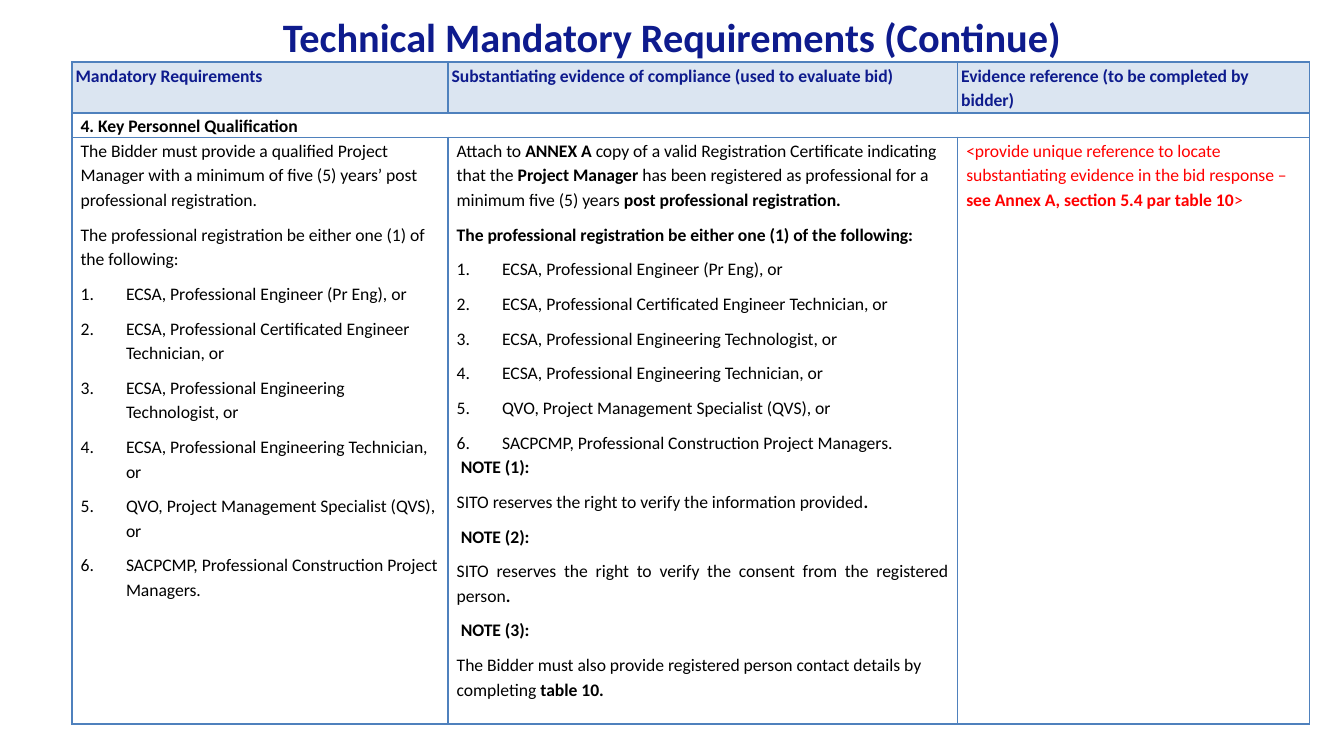
from lxml.etree import SubElement
from pptx import Presentation
from pptx.dml.color import RGBColor
from pptx.enum.text import MSO_ANCHOR, PP_ALIGN
from pptx.oxml.ns import qn
from pptx.util import Pt

COLORS = {"navy": "0E1B8D", "black": "000000", "red": "FF0000",
          "header": "DBE5F1", "border": "4F81BD"}
FONT = "Calibri"


def add_run(para, text, size, color, bold):
    span = para.add_run()
    span.text = text
    span.font.name = FONT
    span.font.size = Pt(size)
    span.font.bold = bold
    span.font.color.rgb = RGBColor.from_string(COLORS[color])


def fill_cell(cell, paragraphs, color, margin):
    """Each paragraph is (kind, runs); each run is (text, bold)."""
    cell.margin_left = cell.margin_right = Pt(margin)
    cell.margin_top = cell.margin_bottom = Pt(0)
    frame = cell.text_frame
    for index, (kind, runs) in enumerate(paragraphs):
        para = frame.paragraphs[0] if index == 0 else frame.add_paragraph()
        properties = para._p.get_or_add_pPr()
        if kind in ("item", "last item"):
            properties.set("marL", str(Pt(27)))
            properties.set("indent", str(-Pt(27)))
            SubElement(properties, qn("a:buFont"), typeface="+mj-lt")
            SubElement(properties, qn("a:buAutoNum"), type="arabicPeriod")
        elif kind == "note":
            properties.set("marL", str(Pt(2.4)))
            properties.set("indent", "0")
        para.alignment = PP_ALIGN.JUSTIFY if kind == "justified" else PP_ALIGN.LEFT
        para.line_spacing = 1.15
        para.space_after = Pt(0 if kind == "last item" else 6)
        for text, bold in runs:
            add_run(para, text, 10.5, color, bold)


# Slide
deck = Presentation()
deck.slide_width, deck.slide_height = Pt(800), Pt(450)
page = deck.slides.add_slide(deck.slide_layouts[6])

# Title
title = page.shapes.add_textbox(Pt(17.3), Pt(2.9), Pt(765.4), Pt(37.4))
title.text_frame.word_wrap = True
title.text_frame.vertical_anchor = MSO_ANCHOR.MIDDLE
heading = title.text_frame.paragraphs[0]
heading.alignment = PP_ALIGN.CENTER
add_run(heading, "Technical Mandatory Requirements (Continue)", 24, "navy", True)

# Table wording
headers = ["Mandatory Requirements",
           "Substantiating evidence of compliance (used to evaluate bid)",
           "Evidence reference (to be completed by bidder)"]
registrations = ["ECSA, Professional Engineer (Pr Eng), or",
                 "ECSA, Professional Certificated Engineer Technician, or",
                 "ECSA, Professional Engineering Technologist, or",
                 "ECSA, Professional Engineering Technician, or",
                 "QVO, Project Management Specialist (QVS), or"]
registration_items = [("item", [(text, False)]) for text in registrations]
registration_items.append(
    ("last item", [("SACPCMP, Professional Construction Project Managers.", False)]))
choice = "The professional registration be either one (1) of the following:"

requirements = [
    ("plain", [("The Bidder must provide a qualified Project Manager with a minimum "
                "of five (5) years’ post professional registration.", False)]),
    ("plain", [(choice, False)]),
    *registration_items,
]
evidence = [
    ("plain", [("Attach to ", False), ("ANNEX A", True),
               (" copy of a valid Registration Certificate indicating that the ", False),
               ("Project Manager", True),
               (" has been registered as professional for a minimum five (5) years ", False),
               ("post professional registration.", True)]),
    ("plain", [(choice, True)]),
    *registration_items,
    ("note", [("NOTE (1):", True)]),
    ("justified", [("SITO reserves the right to verify the information provided", False),
                   (".", True)]),
    ("note", [("NOTE (2):", True)]),
    ("justified", [("SITO reserves the right to verify the consent from the "
                    "registered person", False), (".", True)]),
    ("note", [("NOTE (3):", True)]),
    ("plain", [("The Bidder must also provide registered person contact details by "
                "completing ", False), ("table 10.", True)]),
]
reference = [
    ("plain", [("<provide unique reference to locate substantiating evidence in the "
                "bid response – ", False),
               ("see Annex A, section 5.4 par table 10", True), (">", False)]),
]

# Table grid
widths, heights = [223.9, 303.3, 209.5], [30.2, 14.6, 349.2]
frame = page.shapes.add_table(3, 3, Pt(42.8), Pt(37), Pt(sum(widths)), Pt(sum(heights)))
table = frame.table
table.first_row = table.horz_banding = False
for column, width in zip(table.columns, widths):
    column.width = Pt(width)
for row, height in zip(table.rows, heights):
    row.height = Pt(height)

# Cell borders and fills
for row_index in range(3):
    for column_index in range(3):
        cell = table.cell(row_index, column_index)
        cell_properties = cell._tc.get_or_add_tcPr()
        for side in ("a:lnL", "a:lnR", "a:lnT", "a:lnB"):
            line = SubElement(cell_properties, qn(side), w=str(Pt(1)))
            solid = SubElement(line, qn("a:solidFill"))
            SubElement(solid, qn("a:srgbClr"), val=COLORS["border"])
        if row_index == 0:
            cell.fill.solid()
            cell.fill.fore_color.rgb = RGBColor.from_string(COLORS["header"])
        else:
            cell.fill.background()

# Cell text
for column_index, text in enumerate(headers):
    fill_cell(table.cell(0, column_index), [("plain", [(text, True)])], "navy", 2.2)
table.cell(1, 0).merge(table.cell(1, 2))
fill_cell(table.cell(1, 0), [("plain", [("4. Key Personnel Qualification", True)])],
          "black", 5.2)
body = [(requirements, "black"), (evidence, "black"), (reference, "red")]
for column_index, (paragraphs, color) in enumerate(body):
    fill_cell(table.cell(2, column_index), paragraphs, color, 5.2)

deck.save("out.pptx")
